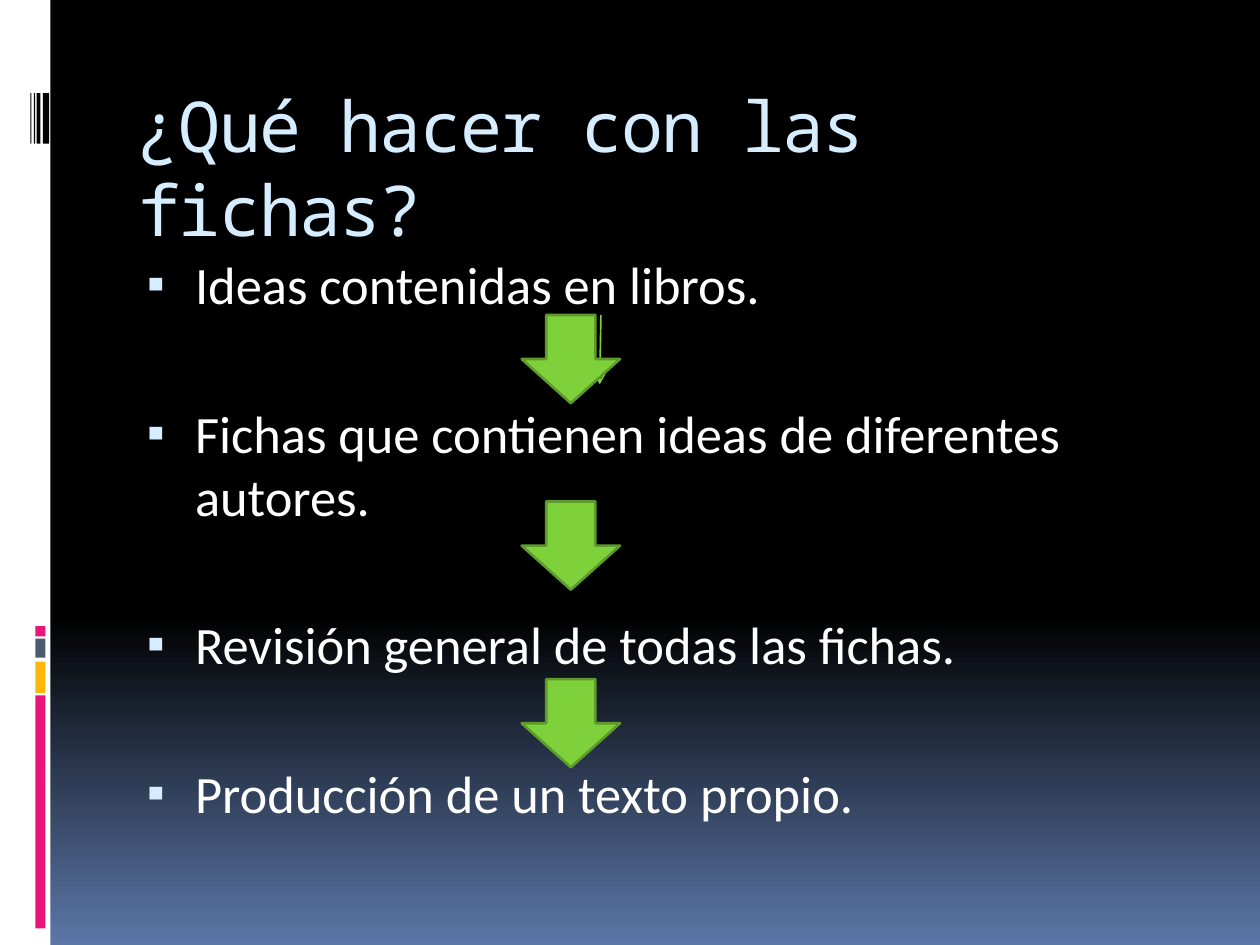
from lxml import etree
from pptx import Presentation
from pptx.dml.color import RGBColor
from pptx.enum.shapes import MSO_CONNECTOR, MSO_SHAPE
from pptx.enum.text import MSO_ANCHOR, PP_ALIGN
from pptx.oxml.ns import qn
from pptx.util import Pt

RECT, DOWN_ARROW = MSO_SHAPE.RECTANGLE, MSO_SHAPE.DOWN_ARROW
STRAIGHT = MSO_CONNECTOR.STRAIGHT
TOP, LEFT = MSO_ANCHOR.TOP, PP_ALIGN.LEFT

WHITE = RGBColor(0xFF, 0xFF, 0xFF)
BLACK = RGBColor(0, 0, 0)
BLUE = RGBColor(0x5B, 0x77, 0xA8)
PALE = RGBColor(0xD6, 0xEC, 0xFF)
PINK = RGBColor(0xEA, 0x15, 0x7A)
AMBER = RGBColor(0xFE, 0xB8, 0x0A)
SLATE = RGBColor(0x4E, 0x5B, 0x6F)
GREEN = RGBColor(0x7F, 0xD1, 0x3B)
DARK_GREEN = RGBColor(0x5E, 0x9B, 0x2C)

TITLE = "¿Qué hacer con las fichas?"
STEPS = [
    "Ideas contenidas en libros.",
    "Fichas que contienen ideas de diferentes autores.",
    "Revisión general de todas las fichas.",
    "Producción de un texto propio.",
]
SIDE_BLOCKS = [(397.4, 133.2, PINK), (378, 18, AMBER),
               (365, 10.8, SLATE), (357.8, 5.8, PINK)]
BARCODE = [(24.5, 3.6), (20.9, 2.2), (19.4, 0.7), (17.3, 0.7)]
ARROW_TOPS = [286.6, 388.1, 180]
BOX_LEFT, BOX_WIDTH = 72, 612


def add_block(s, kind, x, y, w, h, color, line=None):
    sp = s.shapes.add_shape(kind, Pt(x), Pt(y), Pt(w), Pt(h))
    sp.shadow.inherit = False
    sp.fill.solid()
    sp.fill.fore_color.rgb = color
    if line:
        sp.line.color.rgb = line
        sp.line.width = Pt(1.5)
    else:
        sp.line.fill.background()


def write(p, text, *, font, size, color, before=0, spacing=None, track=None):
    p.alignment = LEFT
    p.space_before = Pt(before)
    if spacing:
        p.line_spacing = spacing
    r = p.add_run()
    r.text = text
    r.font.name, r.font.size, r.font.color.rgb = font, Pt(size), color
    if track:
        r.font._element.set("spc", str(track))


def add_bullet(p, char, color, percent):
    pPr = p._p.get_or_add_pPr()
    pPr.set("marL", str(Pt(32.4)))
    pPr.set("indent", str(Pt(-27.4)))
    clr = etree.SubElement(pPr, qn("a:buClr"))
    etree.SubElement(clr, qn("a:srgbClr")).set("val", str(color))
    etree.SubElement(pPr, qn("a:buSzPct")).set("val", str(percent * 1000))
    etree.SubElement(pPr, qn("a:buFont")).set("typeface", "Calibri")
    etree.SubElement(pPr, qn("a:buChar")).set("char", char)


def add_line_arrow(s, x1, y1, x2, y2):
    c = s.shapes.add_connector(STRAIGHT, Pt(x1), Pt(y1), Pt(x2), Pt(y2))
    c.line.color.rgb = GREEN
    c.line.width = Pt(0.94)
    ln = c.line._get_or_add_ln()
    etree.SubElement(ln, qn("a:tailEnd")).set("type", "arrow")
    etree.SubElement(c._element.spPr, qn("a:effectLst"))


def main():
    prs = Presentation()
    prs.slide_width, prs.slide_height = Pt(720), Pt(540)
    s = prs.slides.add_slide(prs.slide_layouts[5])

    fill = s.background.fill
    fill.gradient()
    fill.gradient_angle = 270
    for stop, (pos, color) in zip(fill.gradient_stops, [(0.65, BLACK), (1, BLUE)]):
        stop.position, stop.color.rgb = pos, color

    add_block(s, RECT, 0, 0, 28.8, 540, WHITE)
    for y, h, color in SIDE_BLOCKS:
        add_block(s, RECT, 20.2, y, 5.8, h, color)
    for x, w in BARCODE:
        add_block(s, RECT, x, 53.3, w, 28.8, BLACK)

    title = s.shapes.title
    title.left, title.top = Pt(BOX_LEFT), Pt(40.3)
    title.width, title.height = Pt(BOX_WIDTH), Pt(72)
    tf = title.text_frame
    tf.word_wrap, tf.vertical_anchor = True, TOP
    tf.margin_top, tf.margin_right = Pt(7), Pt(20)
    write(tf.paragraphs[0], TITLE, font="Noto Sans Mono", size=40,
          color=PALE, spacing=Pt(48), track=-100)

    body = s.shapes.add_textbox(Pt(BOX_LEFT), Pt(140.4), Pt(BOX_WIDTH), Pt(360))
    tf = body.text_frame
    tf.word_wrap, tf.vertical_anchor = True, TOP
    for i, step in enumerate(STEPS):
        p = tf.add_paragraph() if i else tf.paragraphs[0]
        write(p, step, font="Calibri", size=30, color=WHITE, before=49 if i else 0)
        add_bullet(p, "▪", PALE, 95)

    add_line_arrow(s, 343.4, 180, 342.7, 219.6)
    for y in ARROW_TOPS:
        add_block(s, DOWN_ARROW, 298.1, y, 56.2, 50.4, GREEN, DARK_GREEN)

    prs.save("out.pptx")


if __name__ == "__main__":
    main()
